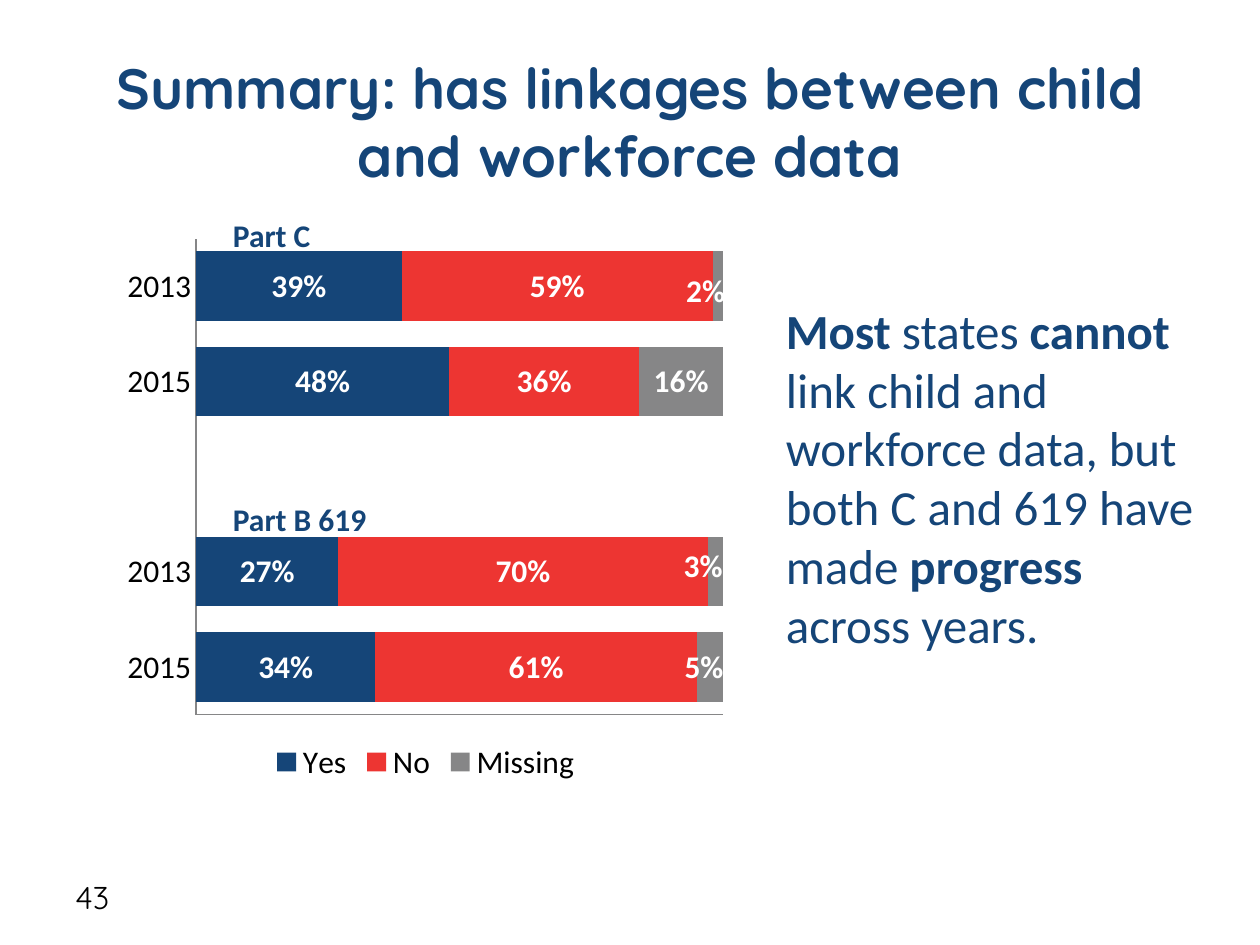
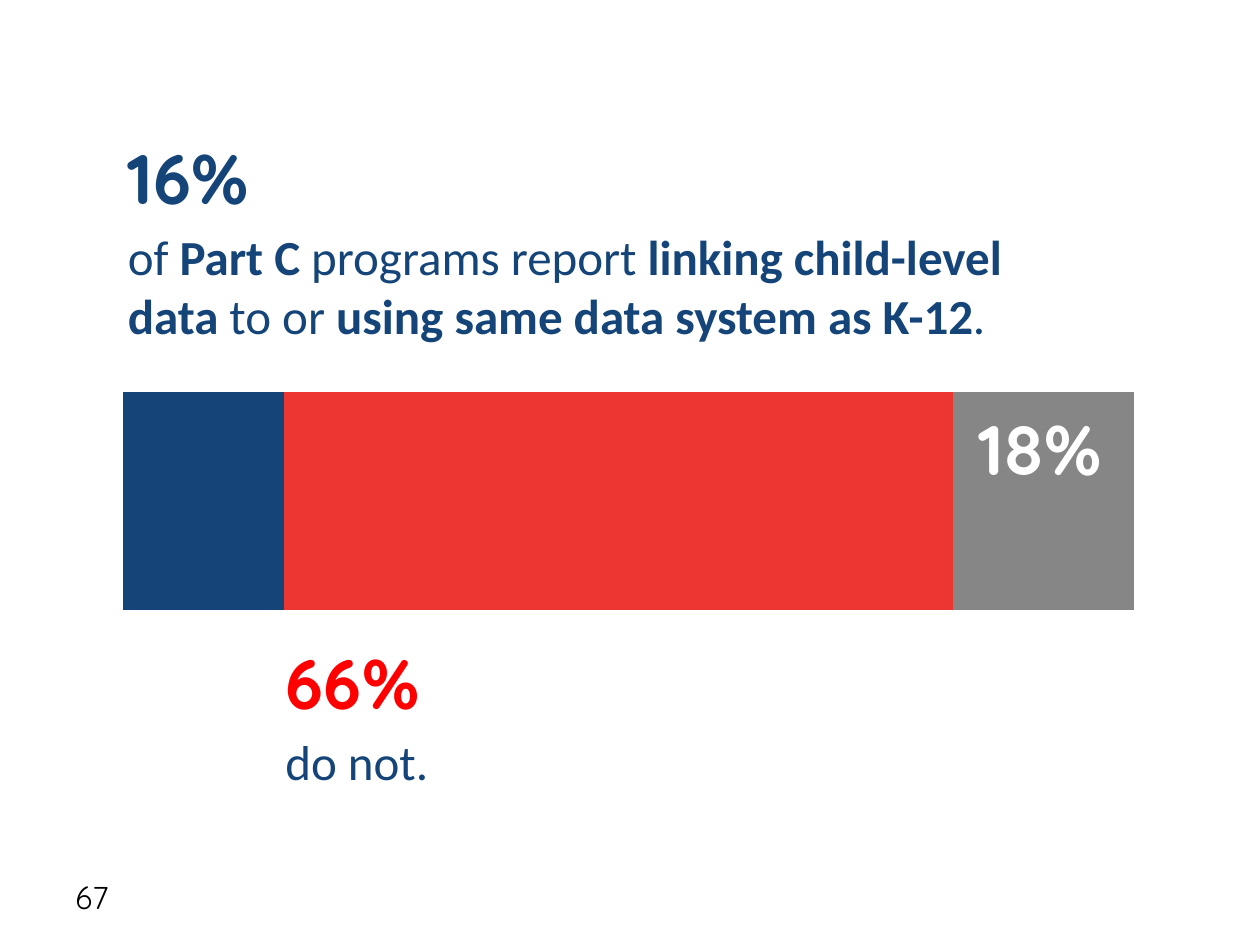
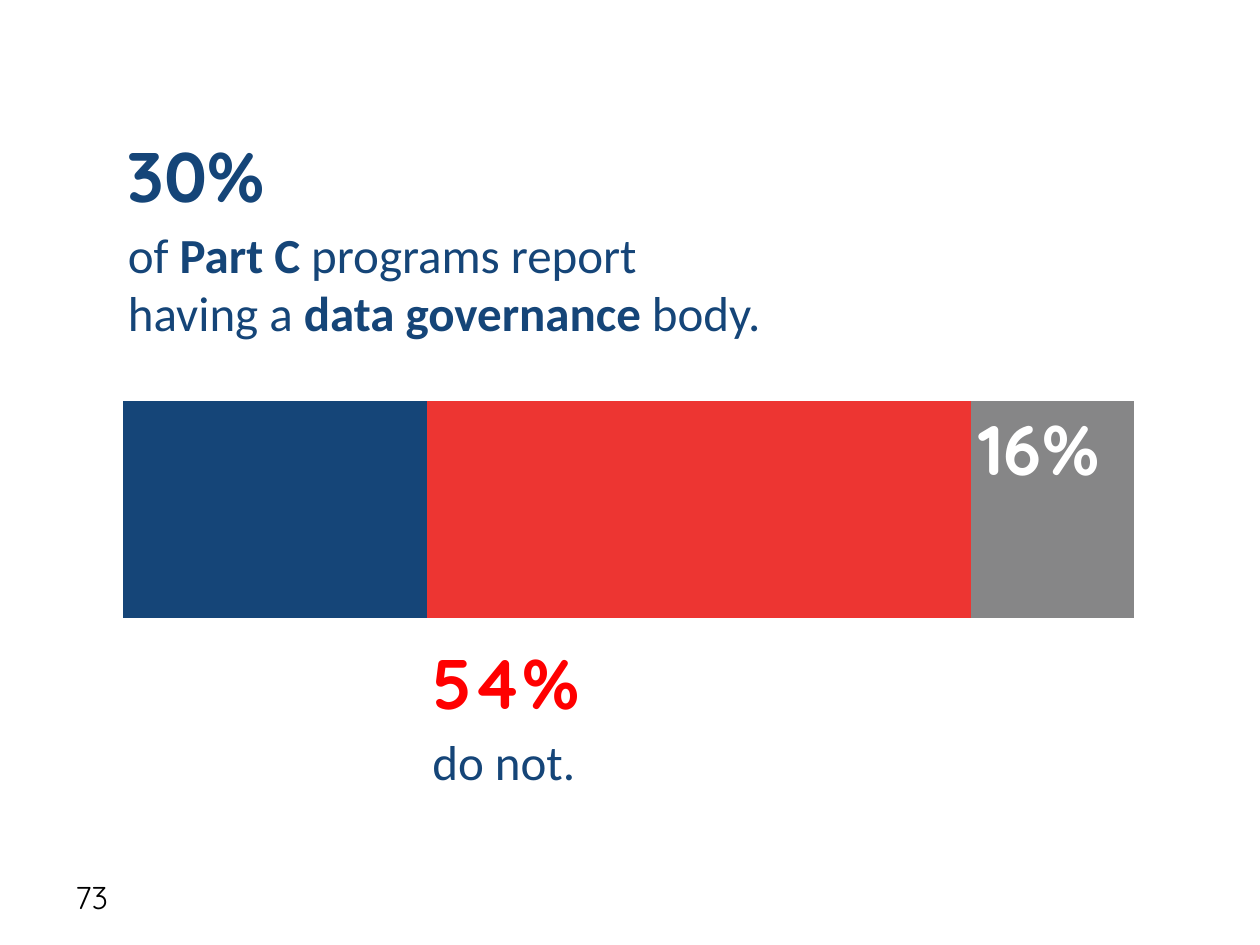
from dataclasses import dataclass

from lxml import etree
from pptx import Presentation
from pptx.chart.data import CategoryChartData
from pptx.dml.color import RGBColor
from pptx.enum import chart as charts, text
from pptx.oxml.ns import qn
from pptx.util import Pt


@dataclass(frozen=True)
class Theme:
    navy: str = "154578"
    red: str = "ED3532"
    bright_red: str = "FF0000"
    gray: str = "868687"
    white: str = "FFFFFF"
    black: str = "000000"
    heading_font: str = "Quicksand"
    body_font: str = "Calibri"
    title: float = 32.4
    figure: float = 40
    body: float = 28
    small: float = 18


THEME = Theme()
ANSWER_COLORS = (THEME.navy, THEME.red, THEME.gray)
TITLE_ONLY, BLANK = 5, 6


def style_font(font, size, color, name=THEME.body_font, bold=False):
    font.size = Pt(size)
    font.color.rgb = RGBColor.from_string(color)
    font.name = name
    font.bold = bold


def add_text(page, frame, content, size, color=THEME.navy,
             font=THEME.body_font, anchor=text.MSO_ANCHOR.TOP):
    """Add a text box; words between ** marks are bold."""
    box = page.shapes.add_textbox(*map(Pt, frame))
    box.text_frame.word_wrap = True
    box.text_frame.vertical_anchor = anchor
    para = box.text_frame.paragraphs[0]
    for index, piece in enumerate(content.split("**")):
        if piece:
            span = para.add_run()
            span.text = piece
            style_font(span.font, size, color, font, bold=index % 2 == 1)


def add_figure(page, left, top, width, figure, color):
    add_text(page, (left, top, width, 55.5), f"**{figure}**",
             THEME.figure, color, THEME.heading_font)


def add_page(deck, layout, number):
    page = deck.slides.add_slide(deck.slide_layouts[layout])
    add_text(page, (36, 498, 168, 29), number, THEME.small, THEME.black,
             THEME.heading_font, text.MSO_ANCHOR.MIDDLE)
    return page


def set_title(page, title):
    box = page.shapes.title
    box.left, box.top, box.width, box.height = map(Pt, (36, 24, 648, 90))
    box.text_frame.text = title
    box.text_frame.word_wrap = True
    box.text_frame.auto_size = text.MSO_AUTO_SIZE.NONE
    box.text_frame.vertical_anchor = text.MSO_ANCHOR.MIDDLE
    para = box.text_frame.paragraphs[0]
    para.alignment = text.PP_ALIGN.CENTER
    style_font(para.runs[0].font, THEME.title, THEME.navy,
               THEME.heading_font, bold=True)


def add_layout(parent, position, **values):
    """Insert a manual chart layout as child number `position`."""
    layout = parent.find(qn("c:layout"))
    if layout is None:
        layout = etree.Element(qn("c:layout"))
        parent.insert(position, layout)
    manual = etree.SubElement(layout, qn("c:manualLayout"))
    for key, value in values.items():
        etree.SubElement(manual, qn(f"c:{key}")).set("val", str(value))


def add_stacked_bar(page, frame, categories, series, gap, maximum, step, plot_area):
    data = CategoryChartData(number_format="0%" if maximum == 1 else "General")
    data.categories = categories
    for name, values in series:
        data.add_series(name, values)
    chart = page.shapes.add_chart(charts.XL_CHART_TYPE.BAR_STACKED,
                                  *map(Pt, frame), data).chart
    style_font(chart.font, THEME.small, THEME.black)
    chart.has_title = chart.has_legend = False
    plot = chart.plots[0]
    plot.gap_width, plot.overlap, plot.vary_by_categories = gap, 100, False
    for row, color in zip(plot.series, ANSWER_COLORS):
        row.format.fill.solid()
        row.format.fill.fore_color.rgb = RGBColor.from_string(color)
    axis = chart.value_axis
    axis.minimum_scale, axis.maximum_scale, axis.major_unit = 0, maximum, step
    axis.has_major_gridlines = False
    left, top, width, height = plot_area
    add_layout(chart.element.find(".//" + qn("c:plotArea")), 0,
               layoutTarget="inner", xMode="edge", yMode="edge",
               x=left, y=top, w=width, h=height)
    return chart


def show_axes(chart):
    for axis in (chart.category_axis, chart.value_axis):
        axis.major_tick_mark = charts.XL_TICK_MARK.NONE
        axis.format.line.width = Pt(0.75)
        axis.format.line.color.rgb = RGBColor.from_string(THEME.gray)
    chart.value_axis.tick_label_position = charts.XL_TICK_LABEL_POSITION.NONE


def show_labels(chart, shifts):
    """Label every bar; shifts maps (series, point) to a label offset."""
    series = list(chart.plots[0].series)
    for row in series:
        labels = row.data_labels
        labels.show_value = True
        labels.number_format, labels.number_format_is_linked = "0%", False
        style_font(labels.font, THEME.small, THEME.white, bold=True)
    for row, point in shifts:
        label = series[row].points[point].data_label
        style_font(label.font, THEME.small, THEME.white, bold=True)
    for row, element in enumerate(chart.element.iter(qn("c:ser"))):
        for label in element.iter(qn("c:dLbl")):
            point = int(label.find(qn("c:idx")).get("val"))
            across, down = shifts[row, point]
            add_layout(label, 1, x=across, y=down)


def build_linkage_summary(deck):
    page = add_page(deck, TITLE_ONLY, "43")
    set_title(page, "Summary: has linkages between child and workforce data")
    add_text(page, (442, 168, 252, 211),
             "**Most** states **cannot** link child and workforce data, but both "
             "C and 619 have made **progress** across years.", THEME.body)

    # Bars run from bottom to top; the empty category parts the two programs
    chart = add_stacked_bar(
        page, (66, 130, 354.5, 320), ("2015", "2013", "", "2015", "2013"),
        (("Yes", (0.34, 0.27, None, 0.48, 0.39)),
         ("No", (0.61, 0.7, None, 0.36, 0.59)),
         ("Missing", (0.05, 0.03, None, 0.16, 0.02))),
        gap=37, maximum=1, step=0.2, plot_area=(0.13, 0.02, 0.85, 0.85))
    show_axes(chart)
    show_labels(chart, {(2, 0): (-0.01, 0), (2, 1): (-0.02, -0.01),
                        (2, 4): (-0.02, 0.01)})
    chart.has_legend = True
    chart.legend.position = charts.XL_LEGEND_POSITION.BOTTOM
    chart.legend.include_in_layout = False
    style_font(chart.legend.font, THEME.small, THEME.black)

    for program, top, width in (("Part C", 120, 62), ("Part B 619", 282, 102)):
        add_text(page, (126, top, width, 29), f"**{program}**", THEME.small)


def build_share_page(deck, number, counts, shares, claim, claim_width,
                     claim_top, chart_top, no_left):
    """One wide bar of yes, no and missing, with the shares around it."""
    page = add_page(deck, BLANK, number)
    total = sum(counts)
    chart = add_stacked_bar(
        page, (60, chart_top, 600, 334), ("1",),
        [(f"Series {i}", (count,)) for i, count in enumerate(counts, 1)],
        gap=150, maximum=total, step=total // 5,
        plot_area=(0.017, 0.047, 0.963, 0.931))
    chart.category_axis.visible = chart.value_axis.visible = False

    yes, no, missing = shares
    add_figure(page, 66, claim_top, 348, yes, THEME.navy)
    add_text(page, (66, claim_top + 52.5, claim_width, 75), claim, THEME.body)
    add_figure(page, no_left, 362, 348, no, THEME.bright_red)
    add_text(page, (no_left, 414.5, 320, 41), "do not.", THEME.body)
    add_figure(page, 552, 228, 96, missing, THEME.white)


def main():
    deck = Presentation()
    deck.slide_width, deck.slide_height = Pt(720), Pt(540)
    build_linkage_summary(deck)
    build_share_page(
        deck, "67", (24, 100, 27), ("16%", "66%", "18%"),
        "of **Part C** programs report **linking child-level data** to or "
        "**using same data system as K-12**.",
        claim_width=540, claim_top=73.5, chart_top=115, no_left=156)
    build_share_page(
        deck, "73", (56, 100, 30), ("30%", "54%", "16%"),
        "of **Part C** programs report having a **data governance **body.",
        claim_width=378, claim_top=72, chart_top=120, no_left=240)
    deck.save("out.pptx")


if __name__ == "__main__":
    main()
